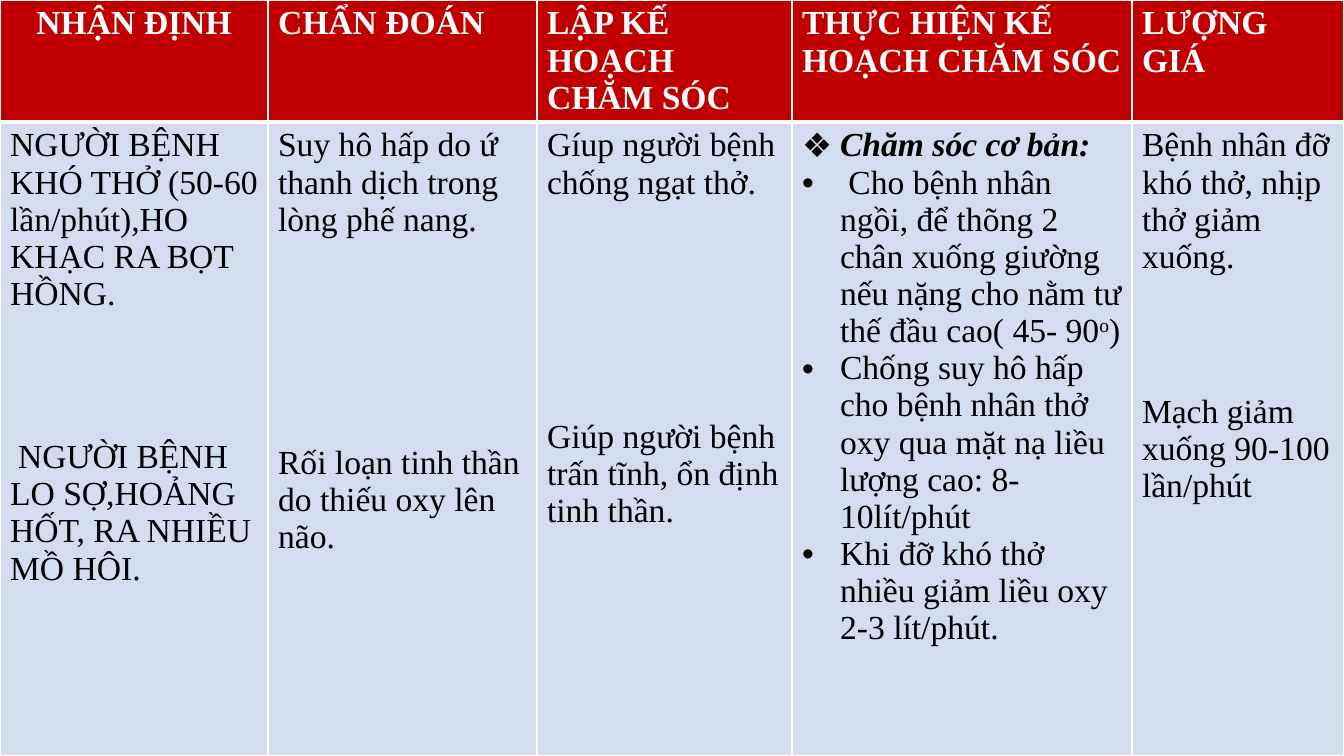
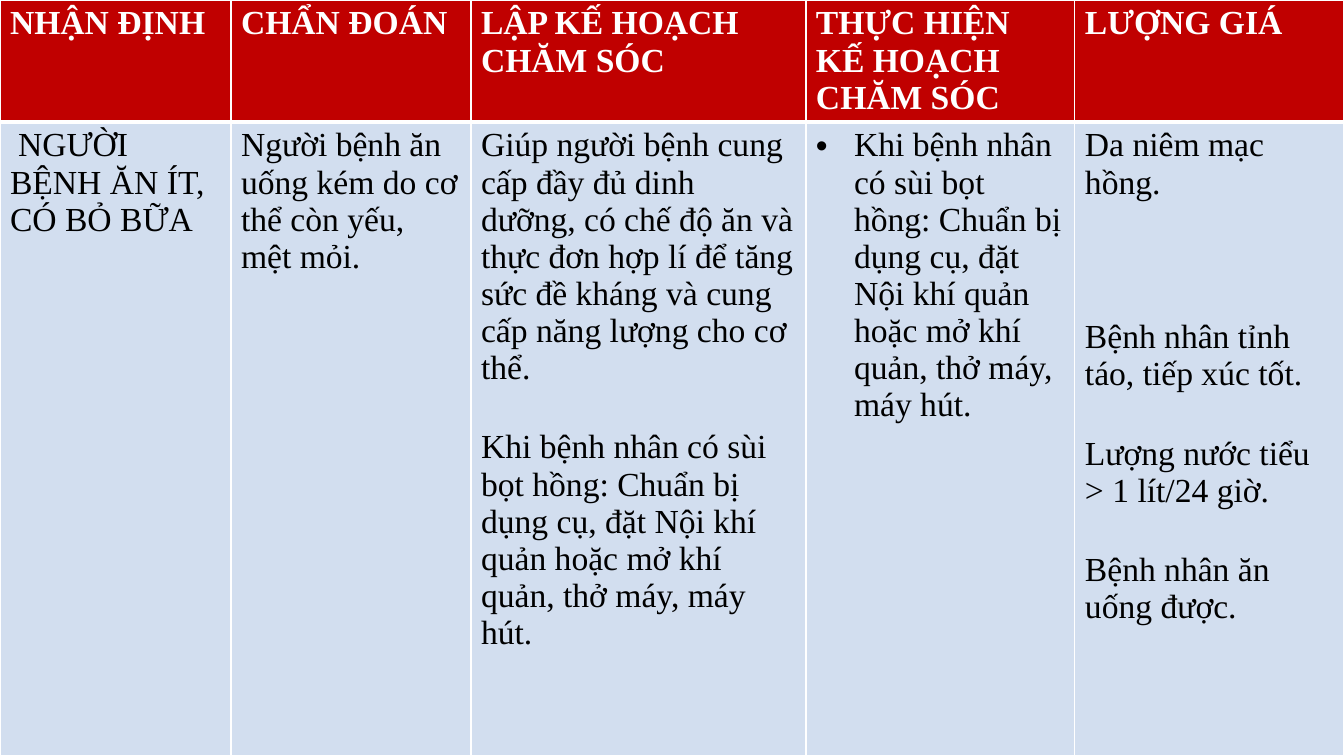
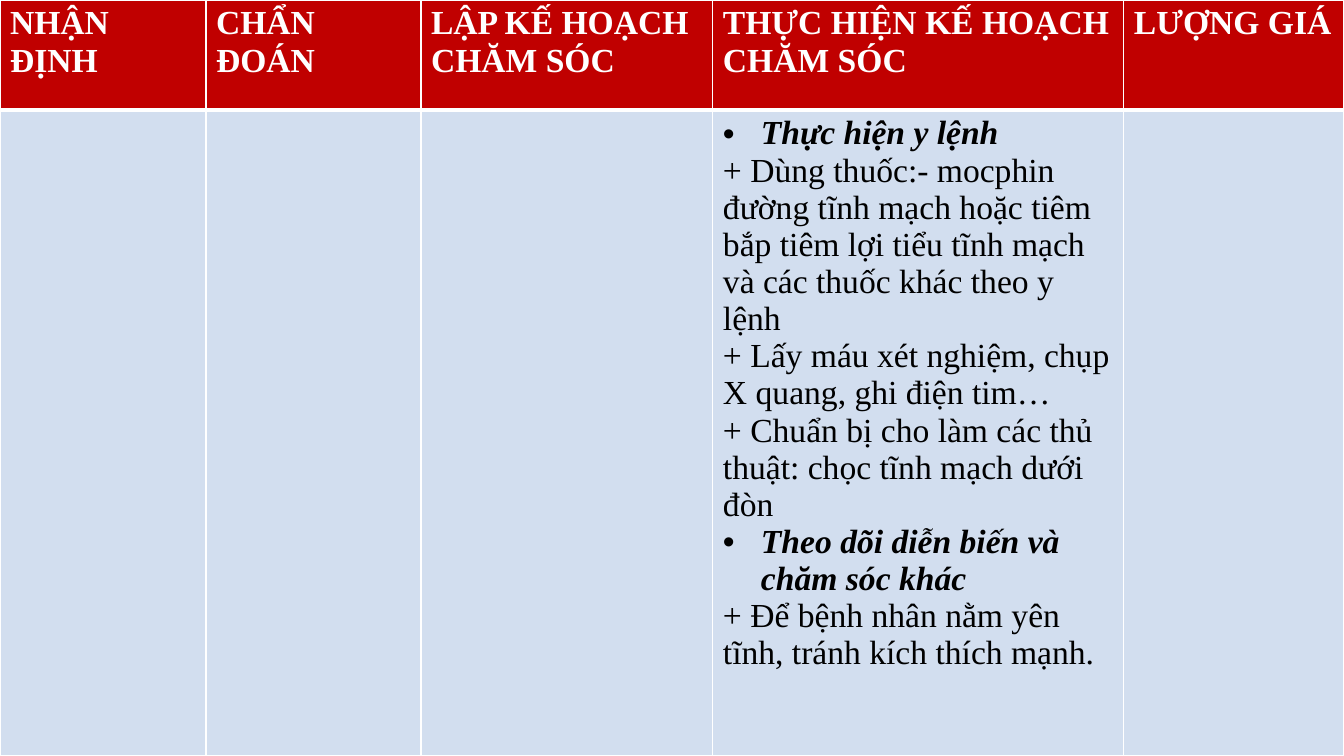
from lxml.etree import SubElement
from pptx import Presentation
from pptx.dml.color import RGBColor
from pptx.enum.text import PP_ALIGN
from pptx.oxml.ns import qn
from pptx.util import Emu, Pt

PAGE_WIDTH, PAGE_HEIGHT = 1344, 756
BULLET_INDENT = 38
FONT = "Times New Roman"
FONT_SIZE = 24

RED = RGBColor(0xC0, 0x00, 0x00)
PALE_BLUE = RGBColor(0xD2, 0xDE, 0xEF)
WHITE = RGBColor(0xFF, 0xFF, 0xFF)
BLACK = RGBColor(0x00, 0x00, 0x00)

HEADINGS = [
    "NHẬN ĐỊNH",
    "CHẨN ĐOÁN",
    "LẬP KẾ HOẠCH CHĂM SÓC",
    "THỰC HIỆN KẾ HOẠCH CHĂM SÓC",
    "LƯỢNG GIÁ",
]
FOAM_CARE = ("Khi bệnh nhân có sùi bọt hồng: Chuẩn bị dụng cụ, đặt Nội khí quản "
             "hoặc mở khí quản, thở máy, máy hút.")


def px(length):
    return Emu(round(length * 914400 / 100.8))


def item(text, **style):
    """Pair a paragraph's text with its format."""
    return text, style


def bullet(text, mark="•", **style):
    return item(text, mark=mark, **style)


def subheading(text, mark="•"):
    return bullet(text, mark, bold=True, italic=True)


BREATHING_CARE = [
    [item("NGƯỜI BỆNH KHÓ THỞ (50-60 lần/phút),HO KHẠC RA BỌT HỒNG.", after=90),
     item("NGƯỜI BỆNH LO SỢ,HOẢNG HỐT, RA NHIỀU MỒ HÔI.", first_indent=8)],
    [item("Suy hô hấp do ứ thanh dịch trong lòng phế nang.", after=147),
     item("Rối loạn tinh thần do thiếu oxy lên não.")],
    [item("Gíup người bệnh chống ngạt thở.", after=155),
     item("Giúp người bệnh trấn tĩnh, ổn định tinh thần.")],
    [subheading("Chăm sóc cơ bản:", mark="❖"),
     bullet(" Cho bệnh nhân ngồi, để thõng 2 chân xuống giường nếu nặng "
            "cho nằm tư thế đầu cao( 45- 90^o^)"),
     bullet("Chống suy hô hấp cho bệnh nhân thở oxy qua mặt nạ liều lượng cao: "
            "8- 10lít/phút"),
     bullet("Khi đỡ khó thở nhiều giảm liều oxy 2-3 lít/phút.")],
    [item("Bệnh nhân đỡ khó thở, nhịp thở giảm xuống.", after=84),
     item("Mạch giảm xuống 90-100 lần/phút")],
]

NUTRITION_CARE = [
    [item("NGƯỜI BỆNH ĂN ÍT, CÓ BỎ BỮA", first_indent=8)],
    [item("Người bệnh ăn uống kém do cơ thể còn yếu, mệt mỏi.")],
    [item("Giúp người bệnh cung cấp đầy đủ dinh dưỡng, có chế độ ăn và thực đơn "
          "hợp lí để tăng sức đề kháng và cung cấp năng lượng cho cơ thể.", after=30),
     item(FOAM_CARE)],
    [bullet(FOAM_CARE)],
    [item("Da niêm mạc hồng.", after=84),
     item("Bệnh nhân tỉnh táo, tiếp xúc tốt.", after=30),
     item("Lượng nước tiểu > 1 lít/24 giờ.", after=30),
     item("Bệnh nhân ăn uống được.")],
]

MEDICAL_ORDERS = [
    [], [], [],
    [subheading("Thực hiện y lệnh"),
     item("+ Dùng thuốc:- mocphin đường tĩnh mạch hoặc tiêm bắp tiêm lợi tiểu "
          "tĩnh mạch và các thuốc khác theo y lệnh"),
     item("+ Lấy máu xét nghiệm, chụp X quang, ghi điện tim…"),
     item("+ Chuẩn bị cho làm các thủ thuật: chọc tĩnh mạch dưới đòn"),
     subheading("Theo dõi diễn biến và chăm sóc khác"),
     item("+ Để bệnh nhân nằm yên tĩnh, tránh kích thích mạnh.")],
    [],
]


def set_indent(para, left, first):
    properties = para._p.get_or_add_pPr()
    properties.set("marL", str(px(left)))
    properties.set("indent", str(px(first)))
    return properties


def add_bullet(para, mark):
    properties = set_indent(para, BULLET_INDENT, -BULLET_INDENT)
    SubElement(properties, qn("a:buFont"), typeface="Arial")
    SubElement(properties, qn("a:buChar"), char=mark)


def write(para, text, color=BLACK, bold=False, italic=False, align=PP_ALIGN.LEFT,
          after=0, first_indent=0, mark=None):
    """Fill a paragraph; text between ^ signs is raised."""
    para.alignment = align
    para.space_after = Pt(after)
    if mark:
        add_bullet(para, mark)
    elif first_indent:
        set_indent(para, 0, first_indent)
    for index, piece in enumerate(text.split("^")):
        span = para.add_run()
        span.text = piece
        span.font.name = FONT
        span.font.size = Pt(FONT_SIZE)
        span.font.bold = bold
        span.font.italic = italic
        span.font.color.rgb = color
        if index % 2:
            span._r.get_or_add_rPr().set("baseline", "30000")


def set_borders(cell, top=1, bottom=1):
    properties = cell._tc.get_or_add_tcPr()
    for side, width in (("L", 1), ("R", 1), ("T", top), ("B", bottom)):
        line = SubElement(properties, qn(f"a:ln{side}"), w=str(Pt(width)))
        fill = SubElement(line, qn("a:solidFill"))
        SubElement(fill, qn("a:srgbClr"), val=str(WHITE))


def fill_cell(cell, items, color, **borders):
    set_borders(cell, **borders)
    cell.fill.solid()
    cell.fill.fore_color.rgb = color
    frame = cell.text_frame
    for index, (text, style) in enumerate(items):
        para = frame.add_paragraph() if index else frame.paragraphs[0]
        write(para, text, **style)


def add_care_page(deck, widths, header_height, body, first_align=PP_ALIGN.LEFT):
    page = deck.slides.add_slide(deck.slide_layouts[6])
    table = page.shapes.add_table(2, len(widths), 0, 0, px(PAGE_WIDTH),
                                  px(PAGE_HEIGHT)).table
    table.horz_banding = False
    table.rows[0].height = px(header_height)
    table.rows[1].height = px(PAGE_HEIGHT - header_height)
    for index, (width, heading, items) in enumerate(zip(widths, HEADINGS, body)):
        table.columns[index].width = px(width)
        align = PP_ALIGN.LEFT if index else first_align
        title = item(heading, color=WHITE, bold=True, align=align)
        fill_cell(table.cell(0, index), [title], RED, bottom=3)
        fill_cell(table.cell(1, index), items, PALE_BLUE, top=3)


def main():
    deck = Presentation()
    deck.slide_width, deck.slide_height = px(PAGE_WIDTH), px(PAGE_HEIGHT)
    add_care_page(deck, [268, 269, 255, 340, 212], 122, BREATHING_CARE,
                  first_align=PP_ALIGN.CENTER)
    add_care_page(deck, [231, 240, 335, 269, 269], 122, NUTRITION_CARE)
    add_care_page(deck, [206, 215, 292, 411, 220], 110, MEDICAL_ORDERS)
    deck.save("out.pptx")


if __name__ == "__main__":
    main()
